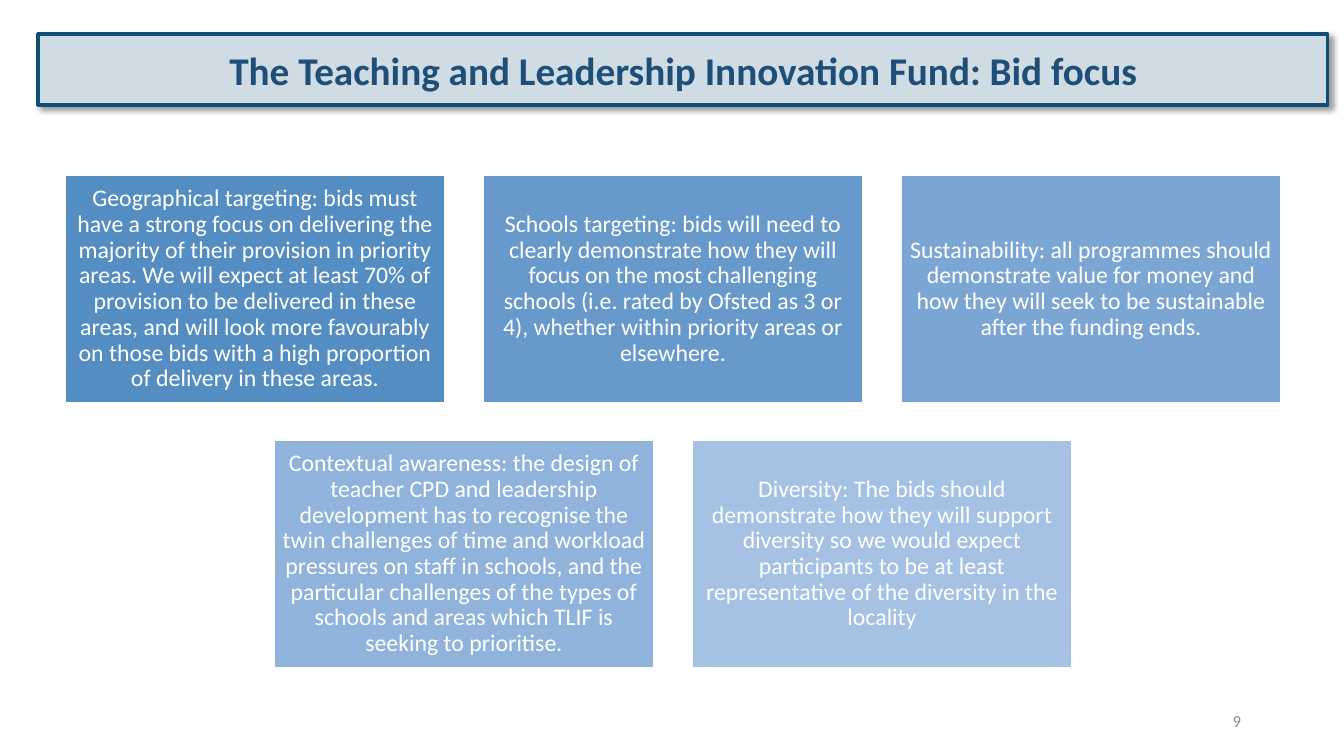
from lxml import etree
from pptx import Presentation
from pptx.dml.color import RGBColor
from pptx.enum.shapes import MSO_SHAPE
from pptx.enum.text import MSO_ANCHOR, PP_ALIGN
from pptx.oxml import parse_xml
from pptx.util import Emu, Pt

# Content
TITLE = "The Teaching and Leadership Innovation Fund: Bid focus"
PAGE_NUMBER = "9"
WHITE = RGBColor(0xFF, 0xFF, 0xFF)
NAVY = RGBColor(0x1F, 0x4E, 0x79)
TEAL = RGBColor(0x10, 0x4F, 0x75)
PALE = RGBColor(0xCF, 0xDC, 0xE3)
GREY = RGBColor(0x8C, 0x8C, 0x8C)
FOCUS_ROWS = [
    [
        ("Geographical targeting: bids must have a strong focus on delivering the "
         "majority of their provision in priority areas. We will expect at least 70% of "
         "provision to be delivered in these areas, and will look more favourably on those "
         "bids with a high proportion of delivery in these areas.",
         RGBColor(0x53, 0x8D, 0xC1)),
        ("Schools targeting: bids will need to clearly demonstrate how they will focus on "
         "the most challenging schools (i.e. rated by Ofsted as 3 or 4), whether within "
         "priority areas or elsewhere.",
         RGBColor(0x67, 0x99, 0xCA)),
        ("Sustainability: all programmes should demonstrate value for money and how they "
         "will seek to be sustainable after the funding ends.",
         RGBColor(0x7B, 0xA6, 0xD3)),
    ],
    [
        ("Contextual awareness: the design of teacher CPD and leadership development has to "
         "recognise the twin challenges of time and workload pressures on staff in schools, "
         "and the particular challenges of the types of schools and areas which TLIF is "
         "seeking to prioritise.",
         RGBColor(0x90, 0xB3, 0xDB)),
        ("Diversity: The bids should demonstrate how they will support diversity so we would "
         "expect participants to be at least representative of the diversity in the locality",
         RGBColor(0xA5, 0xC1, 0xE3)),
    ],
]

# Layout in px
SLIDE_WIDTH, SLIDE_HEIGHT = 1344, 756
BOX_WIDTH, BOX_HEIGHT, GAP = 380, 228, 38
GRID_CENTRE, GRID_TOP, ROW_PITCH = 673, 175, 265
BOX_INSET = 7
FONT = "Calibri"
TITLE_SHADOW = (
    '<a:effectLst xmlns:a="http://schemas.openxmlformats.org/drawingml/2006/main">'
    '<a:outerShdw blurRad="50800" dist="38100" dir="2700000" algn="tl" rotWithShape="0">'
    '<a:srgbClr val="000000"><a:alpha val="40000"/></a:srgbClr>'
    '</a:outerShdw></a:effectLst>'
)


def px(length):
    return Emu(round(length * 914400 / 100.8))


def write(shape, text, size, color, align, bold=False):
    frame = shape.text_frame
    frame.word_wrap = True
    frame.vertical_anchor = MSO_ANCHOR.MIDDLE
    frame.text = text
    paragraph = frame.paragraphs[0]
    paragraph.alignment = align
    font = paragraph.runs[0].font
    font.name, font.size, font.bold = FONT, Pt(size), bold
    font.color.rgb = color
    return paragraph


def add_box(slide, bounds, fill, line, line_width):
    shape = slide.shapes.add_shape(MSO_SHAPE.RECTANGLE, *map(px, bounds))
    shape.shadow.inherit = False
    shape.fill.solid()
    shape.fill.fore_color.rgb = fill
    shape.line.color.rgb = line
    shape.line.width = Pt(line_width)
    return shape


def add_focus_box(slide, left, top, text, fill):
    shape = add_box(slide, (left, top, BOX_WIDTH, BOX_HEIGHT), fill, WHITE, 1)
    frame = shape.text_frame
    frame.margin_left = frame.margin_right = px(BOX_INSET)
    frame.margin_top = frame.margin_bottom = px(BOX_INSET)
    write(shape, text, 17, WHITE, PP_ALIGN.CENTER).line_spacing = 0.9


def main():
    presentation = Presentation()
    presentation.slide_width = px(SLIDE_WIDTH)
    presentation.slide_height = px(SLIDE_HEIGHT)
    slide = presentation.slides.add_slide(presentation.slide_layouts[6])

    # Focus boxes, each row centred
    for row, boxes in enumerate(FOCUS_ROWS):
        row_width = len(boxes) * (BOX_WIDTH + GAP) - GAP
        row_left = GRID_CENTRE - row_width / 2
        for column, (text, fill) in enumerate(boxes):
            add_focus_box(slide, row_left + column * (BOX_WIDTH + GAP),
                          GRID_TOP + row * ROW_PITCH, text, fill)

    # Title banner with a soft shadow
    banner = add_box(slide, (38, 34, 1290, 71), PALE, TEAL, 2.25)
    write(banner, TITLE, 28, NAVY, PP_ALIGN.CENTER, bold=True)
    properties = banner.fill._xPr
    properties.replace(properties.find("{*}effectLst"), parse_xml(TITLE_SHADOW))

    # Page number
    number = slide.shapes.add_textbox(*map(px, (949, 701, 302, 40)))
    write(number, PAGE_NUMBER, 12, GREY, PP_ALIGN.RIGHT)

    presentation.save("out.pptx")


if __name__ == "__main__":
    main()
